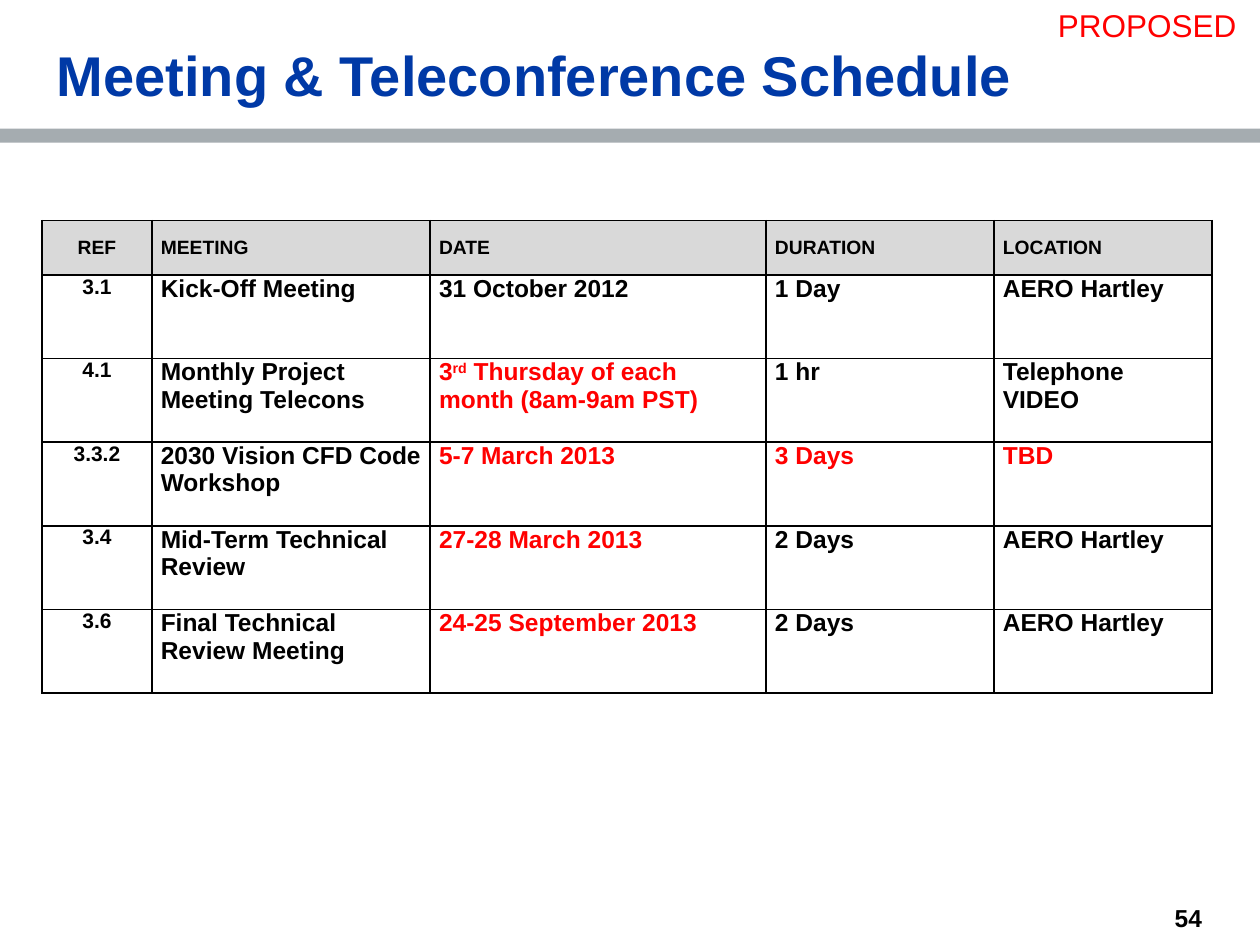
from lxml.etree import SubElement
from pptx import Presentation
from pptx.dml.color import RGBColor
from pptx.enum.shapes import MSO_SHAPE
from pptx.enum.text import MSO_ANCHOR, PP_ALIGN
from pptx.oxml.ns import qn
from pptx.util import Pt

COLORS = {
    "title": "0039A6", "rule": "A5ACB0", "header": "D9D9D9",
    "text": "000000", "alert": "FF0000",
}
COLUMN_WIDTHS = [62.8, 159, 192, 130.2, 124.6]
HEADER_HEIGHT, ROW_HEIGHT = 31.1, 47.8
HEADINGS = ["REF", "MEETING", "DATE", "DURATION", "LOCATION"]
MEETINGS = [
    ["3.1", "Kick-Off Meeting", "31 October 2012", "1 Day", "AERO Hartley"],
    ["4.1", "Monthly Project Meeting Telecons",
     ["3", "^rd", " Thursday of each month (8am-9am PST)"], "1 hr", "Telephone VIDEO"],
    ["3.3.2", "2030 Vision CFD Code Workshop", "5-7 March 2013", "3 Days", "TBD"],
    ["3.4", "Mid-Term Technical Review", "27-28 March 2013", "2 Days", "AERO Hartley"],
    ["3.6", "Final Technical Review Meeting", "24-25 September 2013", "2 Days", "AERO Hartley"],
]
# Row and column indexes of the entries still to be confirmed
PROPOSED_CELLS = {(2, 2), (3, 2), (3, 3), (3, 4), (4, 2), (5, 2)}


class SlideBuilder:
    """Holds the style and the current slide."""

    font = "Arial"

    def __init__(self, page):
        """Keep the slide to draw on."""
        self.page = page

    def color(self, name):
        """Look up a named colour."""
        return RGBColor.from_string(COLORS[name])

    def add_spans(self, para, texts, size, color="text", bold=True):
        """Add runs to a paragraph; a leading ^ marks a superscript."""
        for text in [texts] if isinstance(texts, str) else texts:
            span = para.add_run()
            span.text = text.lstrip("^")
            span.font.name, span.font.size, span.font.bold = self.font, Pt(size), bold
            span.font.color.rgb = self.color(color)
            if text.startswith("^"):
                span.font._element.set("baseline", "30000")

    def fit(self, frame, margins, anchor):
        """Set wrapping, left/top/right/bottom margins and anchor of a text frame."""
        frame.word_wrap = True
        frame.vertical_anchor = anchor
        (frame.margin_left, frame.margin_top,
         frame.margin_right, frame.margin_bottom) = map(Pt, margins)

    def bar(self, left, top, width, height, color):
        """Draw a plain filled rectangle."""
        box = self.page.shapes.add_shape(
            MSO_SHAPE.RECTANGLE, Pt(left), Pt(top), Pt(width), Pt(height))
        box.shadow.inherit = False
        box.fill.solid()
        box.fill.fore_color.rgb = self.color(color)
        box.line.fill.background()

    def title(self, text, left, top, width, height):
        """Move and format the title placeholder."""
        box = self.page.shapes.title
        box.left, box.top, box.width, box.height = map(Pt, (left, top, width, height))
        self.fit(box.text_frame, (0, 0, 0, 0), MSO_ANCHOR.BOTTOM)
        para = box.text_frame.paragraphs[0]
        para.alignment, para.line_spacing = PP_ALIGN.LEFT, 0.9
        self.add_spans(para, text, 32, "title")

    def label(self, text, place, size, margins, anchor=MSO_ANCHOR.TOP,
              align=PP_ALIGN.LEFT, color="text", bold=True):
        """Add a single-line text box."""
        box = self.page.shapes.add_textbox(*map(Pt, place))
        self.fit(box.text_frame, margins, anchor)
        para = box.text_frame.paragraphs[0]
        para.alignment = align
        self.add_spans(para, text, size, color, bold)

    def borders(self, cell):
        """Give a cell a thin black line on each side."""
        properties = cell._tc.get_or_add_tcPr()
        for index, side in enumerate(("lnL", "lnR", "lnT", "lnB")):
            line = SubElement(properties, qn("a:" + side), w=str(Pt(1)))
            fill = SubElement(line, qn("a:solidFill"))
            SubElement(fill, qn("a:srgbClr"), val=COLORS["text"])
            properties.insert(index, line)

    def cell(self, cell, texts, size, color, align, header):
        """Fill, frame and letter one table cell."""
        if header:
            cell.fill.solid()
            cell.fill.fore_color.rgb = self.color("header")
        else:
            cell.fill.background()
        self.borders(cell)
        cell.margin_left = cell.margin_right = Pt(5.1)
        cell.margin_top = cell.margin_bottom = 0
        cell.vertical_anchor = MSO_ANCHOR.MIDDLE if header else MSO_ANCHOR.TOP
        para = cell.text_frame.paragraphs[0]
        para.alignment, para.space_before, para.space_after = align, Pt(12), Pt(9)
        self.add_spans(para, texts, size, color)

    def schedule(self, left, top, headings, meetings):
        """Add the meeting table."""
        rows = [headings] + meetings
        heights = [HEADER_HEIGHT] + [ROW_HEIGHT] * len(meetings)
        table = self.page.shapes.add_table(
            len(rows), len(headings), Pt(left), Pt(top),
            Pt(sum(COLUMN_WIDTHS)), Pt(sum(heights))).table
        table.first_row = table.horz_banding = False
        for column, width in zip(table.columns, COLUMN_WIDTHS):
            column.width = Pt(width)
        for row, entries in enumerate(rows):
            table.rows[row].height = Pt(heights[row])
            for column, texts in enumerate(entries):
                size = 11 if row == 0 else 12 if column == 0 else 14
                color = "alert" if (row, column) in PROPOSED_CELLS else "text"
                align = PP_ALIGN.CENTER if column == 0 else PP_ALIGN.LEFT
                self.cell(table.cell(row, column), texts, size, color, align, row == 0)


def main():
    """Build the schedule slide and save the deck."""
    deck = Presentation()
    deck.slide_width, deck.slide_height = Pt(720), Pt(540)
    page = deck.slides.add_slide(deck.slide_layouts[5])
    builder = SlideBuilder(page)
    builder.bar(0, 73.6, 720, 8, "rule")
    builder.label("54", (547, 514, 140.5, 19.5), 14, (0.7, 0.7, 0.7, 0.7),
                  MSO_ANCHOR.BOTTOM, PP_ALIGN.RIGHT)
    builder.title("Meeting & Teleconference Schedule", 32.5, 27.4, 654, 34.6)
    builder.schedule(24, 126, HEADINGS, MEETINGS)
    builder.label("PROPOSED", (597.5, 0, 122.5, 29), 18, (7.2, 3.6, 7.2, 3.6),
                  color="alert", bold=False)
    deck.save("out.pptx")


main()
